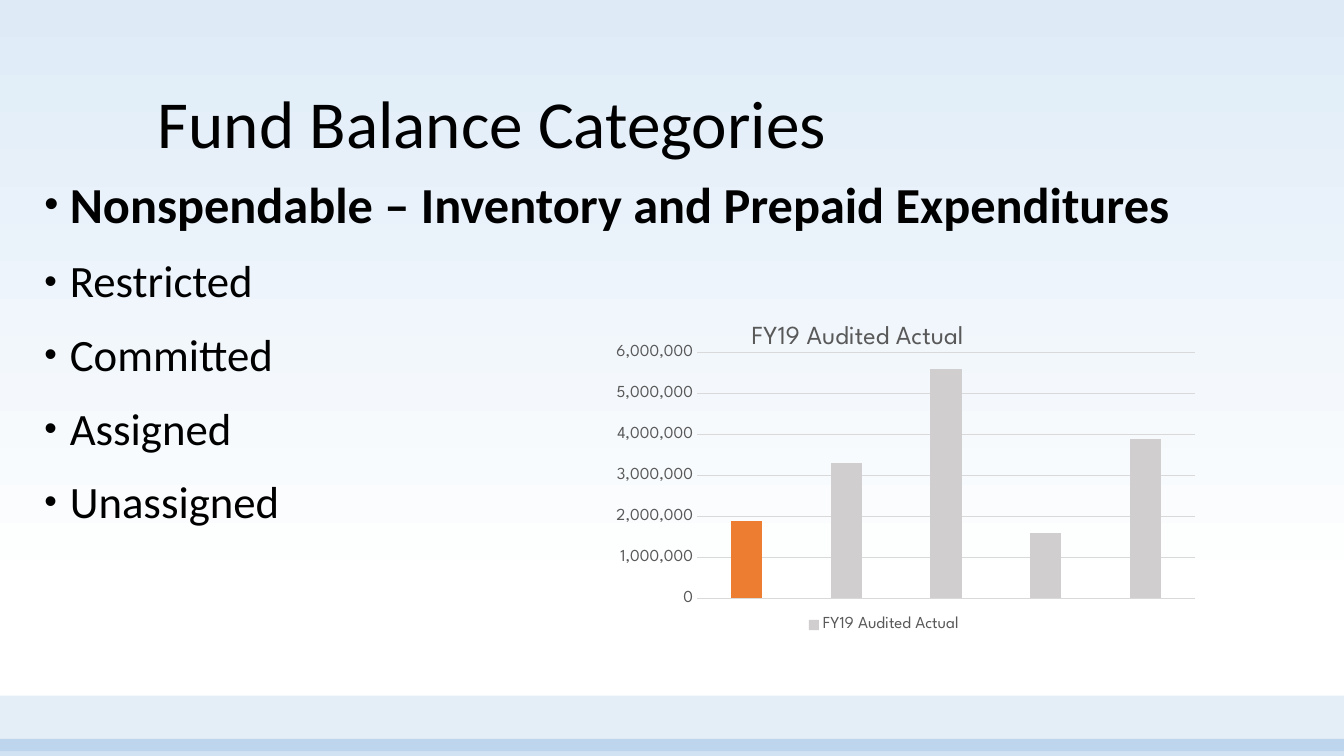
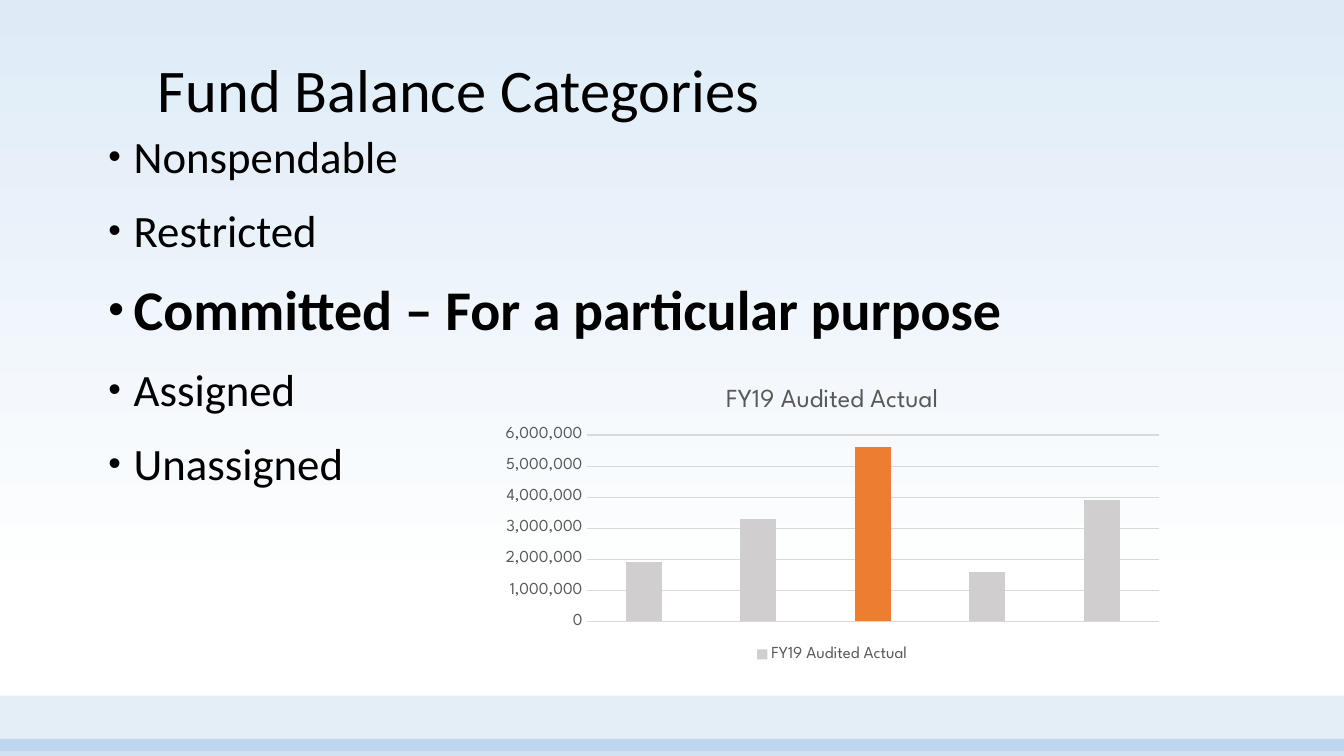
import lxml.etree
import pptx
import pptx.chart.data
import pptx.dml.color
import pptx.enum.chart
import pptx.enum.shapes
import pptx.enum.text
import pptx.oxml.ns
import pptx.util

Cm = pptx.util.Cm
Pt = pptx.util.Pt
qn = pptx.oxml.ns.qn

WIDTH, HEIGHT = 33.87, 19.05
FUNDS = [1900000, 3300000, 5600000, 1600000, 3900000]


def color(code):
    return pptx.dml.color.RGBColor.from_string(code)


def assign(target, values):
    for name, value in values.items():
        setattr(target, name, value)


class FundDeck:
    """Hold the shared style and the current slide, and draw each kind of element."""

    text_font, chart_font = "Calibri", "League Spartan"
    black, gray, grid = "000000", "595959", "D9D9D9"
    sky, white, band_blue = "DEEBF7", "FFFFFF", "5B9BD5"
    muted, accent = "D0CECE", "ED7D31"
    bands = [(17.53, 1.4, 17), (18.62, 0.43, 28)]

    def __init__(self):
        self.deck = pptx.Presentation()
        assign(self.deck, {"slide_width": Cm(WIDTH), "slide_height": Cm(HEIGHT)})
        self.slide = None

    def style_font(self, font, size, name, code, bold=False):
        assign(font, {"size": Pt(size), "name": name, "bold": bold})
        font.color.rgb = color(code)

    def add_slide(self):
        self.slide = self.deck.slides.add_slide(self.deck.slide_layouts[6])
        fill = self.slide.background.fill
        fill.gradient()
        fill.gradient_angle = 270
        for stop, code, position in zip(fill.gradient_stops, (self.sky, self.white), (0, 0.79)):
            stop.color.rgb = color(code)
            stop.position = position
        for top, height, opacity in self.bands:
            self.add_band(top, height, opacity)

    def add_band(self, top, height, opacity):
        band = self.slide.shapes.add_shape(
            pptx.enum.shapes.MSO_SHAPE.RECTANGLE, 0, Cm(top), Cm(WIDTH), Cm(height))
        band.shadow.inherit = False
        band.line.fill.background()
        band.fill.solid()
        band.fill.fore_color.rgb = color(self.band_blue)
        tint = band.fill._xPr.find(".//" + qn("a:srgbClr"))
        lxml.etree.SubElement(tint, qn("a:alpha"), val=str(opacity * 1000))

    def add_text_box(self, place, anchor):
        box = self.slide.shapes.add_textbox(*map(Cm, place))
        assign(box.text_frame, {"word_wrap": True, "vertical_anchor": anchor})
        return box.text_frame

    def add_span(self, para, text, size, bold=False):
        para.line_spacing = 0.9
        span = para.add_run()
        span.text = text
        self.style_font(span.font, size, self.text_font, self.black, bold)

    def add_title(self, text, height, size):
        frame = self.add_text_box((3.73, 1.22, 26.42, height), pptx.enum.text.MSO_ANCHOR.BOTTOM)
        self.add_span(frame.paragraphs[0], text, size)

    def add_bullets(self, place, items, strong, strong_size):
        frame = self.add_text_box(place, pptx.enum.text.MSO_ANCHOR.TOP)
        for index, text in enumerate(items):
            para = frame.add_paragraph() if index else frame.paragraphs[0]
            bold = index == strong
            self.add_span(para, text, strong_size if bold else 32, bold)
            para.space_before = Pt(18)
            properties = para._p.get_or_add_pPr()
            properties.set("marL", str(Cm(0.76)))
            properties.set("indent", str(-Cm(0.64)))
            for tag, attributes in (("a:buSzPct", {"val": "80000"}),
                                    ("a:buFont", {"typeface": "Arial"}),
                                    ("a:buChar", {"char": "•"})):
                lxml.etree.SubElement(properties, qn(tag), attributes)

    def add_chart(self, place, highlight):
        data = pptx.chart.data.CategoryChartData(number_format="#,##0")
        data.categories = [str(number + 1) for number in range(len(FUNDS))]
        data.add_series("FY19 Audited Actual", FUNDS)
        chart = self.slide.shapes.add_chart(
            pptx.enum.chart.XL_CHART_TYPE.COLUMN_CLUSTERED, *map(Cm, place), data).chart
        self.style_font(chart.font, 10, self.chart_font, self.black)
        assign(chart, {"has_title": True, "has_legend": True})

        title = chart.chart_title.text_frame
        title.text = "FY19 Audited Actual"
        self.style_font(title.paragraphs[0].runs[0].font, 18.6, self.chart_font, self.gray)
        assign(chart.legend, {"position": pptx.enum.chart.XL_LEGEND_POSITION.BOTTOM,
                              "include_in_layout": False})
        self.style_font(chart.legend.font, 12, self.chart_font, self.gray)

        chart.category_axis.visible = False
        no_tick = pptx.enum.chart.XL_TICK_MARK.NONE
        axis = chart.value_axis
        assign(axis, {"major_tick_mark": no_tick, "minor_tick_mark": no_tick,
                      "has_major_gridlines": True, "minimum_scale": 0,
                      "maximum_scale": 6000000, "major_unit": 1000000})
        assign(axis.tick_labels, {"number_format": "#,##0", "number_format_is_linked": False})
        self.style_font(axis.tick_labels.font, 12, self.chart_font, self.gray)
        axis.format.line.fill.background()
        axis.major_gridlines.format.line.width = Pt(0.75)
        axis.major_gridlines.format.line.color.rgb = color(self.grid)

        plot = chart.plots[0]
        assign(plot, {"gap_width": 219, "overlap": -27, "vary_by_categories": False})
        series = plot.series[0]
        for part, code in ((series, self.muted), (series.points[highlight], self.accent)):
            part.format.fill.solid()
            part.format.fill.fore_color.rgb = color(code)
        return chart

    def place_chart_part(self, part, index, values):
        for old_layout in part.findall(qn("c:layout")):
            part.remove(old_layout)
        layout = lxml.etree.Element(qn("c:layout"))
        part.insert(index, layout)
        manual = lxml.etree.SubElement(layout, qn("c:manualLayout"))
        for name, value in values.items():
            lxml.etree.SubElement(manual, qn("c:" + name), val=str(value))

    def arrange_chart(self, chart, title_place, plot_place):
        edges = {"xMode": "edge", "yMode": "edge"}
        area = chart._chartSpace.find(".//" + qn("c:plotArea"))
        self.place_chart_part(chart.chart_title._element, 1,
                              {**edges, **dict(zip("xy", title_place))})
        self.place_chart_part(area, 0, {"layoutTarget": "inner", **edges,
                                        **dict(zip("xywh", plot_place))})


def main():
    funds = FundDeck()

    funds.add_slide()
    funds.add_title("Fund Balance Categories", 3.02, 48)
    funds.add_bullets(
        (0.75, 4.4, 32.82, 12.07),
        ["Nonspendable – Inventory and Prepaid Expenditures", "Restricted", "Committed",
         "Assigned", "Unassigned"], 0, 36)
    chart = funds.add_chart((14.43, 8, 15.7, 8.05), 0)
    funds.arrange_chart(chart, (0.28, 0), (0.2, 0.11, 0.8, 0.77))

    funds.add_slide()
    funds.add_title("Fund Balance Categories", 2.06, 43.2)
    funds.add_bullets(
        (2.36, 3.28, 28.27, 12.07),
        ["Nonspendable", "Restricted", "Committed – For a particular purpose",
         "Assigned", "Unassigned"], 2, 40)
    funds.add_chart((12.4, 9.3, 17.15, 7.49), 2)

    funds.deck.save("out.pptx")


if __name__ == "__main__":
    main()
